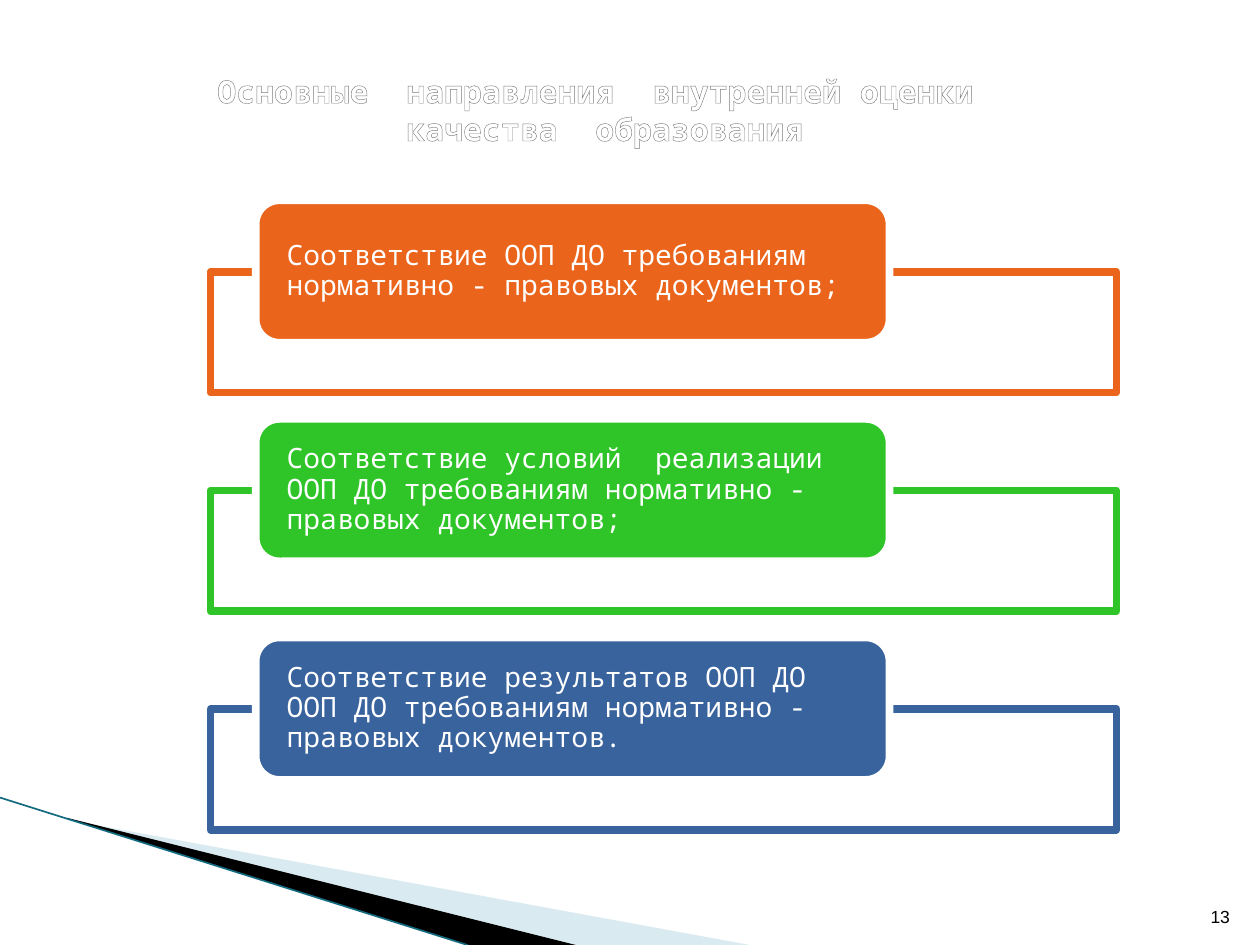
"""Build a slide listing the directions of internal education quality assessment."""
import dataclasses

import lxml.etree
import pptx
import pptx.dml.color
import pptx.enum.shapes
import pptx.enum.text
import pptx.oxml
import pptx.oxml.ns
import pptx.util

RGBColor = pptx.dml.color.RGBColor
ShapeType = pptx.enum.shapes.MSO_SHAPE
Anchor = pptx.enum.text.MSO_ANCHOR
Align = pptx.enum.text.PP_ALIGN

WHITE = RGBColor(0xFF, 0xFF, 0xFF)
BLACK = RGBColor(0x00, 0x00, 0x00)
ORANGE = RGBColor(0xEB, 0x64, 0x1B)
GREEN = RGBColor(0x2F, 0xC5, 0x29)
BLUE = RGBColor(0x39, 0x63, 0x9D)
PALE_BLUE = RGBColor(0xA0, 0xCB, 0xDC)
TEAL = RGBColor(0x13, 0x6B, 0x80)
OUTLINE_GREY = RGBColor(0x7D, 0x7D, 0x7D)
TITLE_GREY = RGBColor(0x7F, 0x7F, 0x7F)

COLUMNS, ROWS = 100, 75
CELL = pptx.util.Inches(0.1)
FIRST_ROW, ROW_STEP = 15.9, 17.35
BORDER = pptx.util.Pt(4.33)
FONT = "Noto Sans Mono"
TITLE = "Основные  направления  внутренней оценки  качества  образования"


@dataclasses.dataclass(frozen=True)
class Box:
    """A rectangle in grid columns and rows."""

    column: float
    row: float
    width: float
    height: float

    def lengths(self) -> list[int]:
        """Return left, top, width and height in slide units."""
        return [grid(value) for value in dataclasses.astuple(self)]


@dataclasses.dataclass(frozen=True)
class Direction:
    """One assessment direction and its colour."""

    text: str
    color: RGBColor


@dataclasses.dataclass(frozen=True)
class Wedge:
    """A filled corner wedge given by its grid points."""

    points: tuple[tuple[float, float], ...]
    color: RGBColor
    opacity: int


DIRECTIONS = (
    Direction("Соответствие ООП ДО требованиям нормативно - правовых документов;", ORANGE),
    Direction("Соответствие условий  реализации  ООП ДО требованиям нормативно - правовых документов;", GREEN),
    Direction("Соответствие результатов ООП ДО ООП ДО требованиям нормативно - правовых документов.", BLUE),
)
WEDGES = (
    Wedge(((5.5, 65.1), (59.5, ROWS), (45.6, ROWS), (5.5, 65)), PALE_BLUE, 40),
    Wedge(((5.3, 64.9), (45.7, ROWS), (37.2, ROWS), (5.4, 65)), BLACK, 100),
)


def grid(value: float) -> int:
    """Convert grid cells to slide units."""
    return round(value * CELL)


def set_opacity(shape, percent: int) -> None:
    """Make the solid fill of a shape partly transparent."""
    color = shape.fill._xPr.find(".//" + pptx.oxml.ns.qn("a:srgbClr"))
    lxml.etree.SubElement(color, pptx.oxml.ns.qn("a:alpha"), val=str(percent * 1000))


def add_wedge(slide, wedge: Wedge) -> None:
    """Draw one corner wedge."""
    points = [(grid(column), grid(row)) for column, row in wedge.points]
    builder = slide.shapes.build_freeform(*points[0])
    builder.add_line_segments(points[1:], close=True)
    shape = builder.convert_to_shape()
    shape.shadow.inherit = False
    shape.fill.solid()
    shape.fill.fore_color.rgb = wedge.color
    set_opacity(shape, wedge.opacity)
    shape.line.fill.background()


def add_edge(slide) -> None:
    """Draw the thin line along the corner wedges."""
    edge = slide.shapes.add_connector(
        pptx.enum.shapes.MSO_CONNECTOR.STRAIGHT, 0, grid(63.3), grid(37.1), grid(ROWS)
    )
    edge.line.color.rgb = TEAL
    edge.line.width = pptx.util.Pt(0.95)
    lxml.etree.SubElement(edge._element.spPr, pptx.oxml.ns.qn("a:effectLst"))


def add_block(slide, kind, box: Box, fill: RGBColor, border: RGBColor):
    """Draw one filled and bordered block."""
    shape = slide.shapes.add_shape(kind, *box.lengths())
    shape.shadow.inherit = False
    shape.fill.solid()
    shape.fill.fore_color.rgb = fill
    shape.line.color.rgb = border
    shape.line.width = BORDER
    return shape


def add_direction(slide, direction: Direction, row: float) -> None:
    """Draw a frame with a labelled rounded block over its top edge."""
    frame = add_block(slide, ShapeType.RECTANGLE, Box(16.7, row + 5.67, 71.9, 9.6), WHITE, direction.color)
    set_opacity(frame, 90)
    label = add_block(slide, ShapeType.ROUNDED_RECTANGLE, Box(20.3, row, 50.3, 11.3), direction.color, WHITE)
    text_frame = label.text_frame
    text_frame.word_wrap = True
    text_frame.vertical_anchor = Anchor.MIDDLE
    text_frame.margin_left = text_frame.margin_right = grid(1.9)
    text_frame.margin_top = text_frame.margin_bottom = 0
    paragraph = text_frame.paragraphs[0]
    paragraph.text = direction.text
    paragraph.alignment = Align.LEFT
    paragraph.line_spacing = 0.9
    style_font(paragraph.font, FONT, 16, WHITE)


def style_font(font, name: str, size: float, color: RGBColor) -> None:
    """Set the typeface, size and colour of a font."""
    font.name = name
    font.size = pptx.util.Pt(size)
    font.color.rgb = color


def add_text(slide, box: Box, text: str, alignment, anchor):
    """Add a wrapped text box and return its paragraph."""
    text_frame = slide.shapes.add_textbox(*box.lengths()).text_frame
    text_frame.word_wrap = True
    text_frame.vertical_anchor = anchor
    paragraph = text_frame.paragraphs[0]
    paragraph.text = text
    paragraph.alignment = alignment
    return paragraph


def add_title(slide) -> None:
    """Add the outlined title with a gradient fill."""
    paragraph = add_text(slide, Box(16.1, 5.2, 63.8, 10.2), TITLE, Align.CENTER, Anchor.TOP)
    font = paragraph.runs[0].font
    style_font(font, FONT, 18, WHITE)
    font.bold = True
    stops = "".join(
        f'<a:gs pos="{position * 1000}"><a:srgbClr val="{color}"/></a:gs>'
        for position, color in ((0, WHITE), (9, WHITE), (50, TITLE_GREY), (79, WHITE), (100, WHITE))
    )
    namespace = pptx.oxml.ns.nsdecls("a")
    properties = font._element
    properties.replace(properties.find(pptx.oxml.ns.qn("a:solidFill")), pptx.oxml.parse_xml(
        f'<a:gradFill {namespace}><a:gsLst>{stops}</a:gsLst><a:lin ang="5400000"/></a:gradFill>'
    ))
    properties.insert(0, pptx.oxml.parse_xml(
        f'<a:ln {namespace} w="{pptx.util.Pt(0.83)}"><a:solidFill>'
        f'<a:srgbClr val="{OUTLINE_GREY}"/></a:solidFill></a:ln>'
    ))


def main() -> None:
    """Build and save the presentation."""
    presentation = pptx.Presentation()
    presentation.slide_width, presentation.slide_height = grid(COLUMNS), grid(ROWS)
    slide = presentation.slides.add_slide(presentation.slide_layouts[6])
    for wedge in WEDGES:
        add_wedge(slide, wedge)
    add_edge(slide)
    for index, direction in enumerate(DIRECTIONS):
        add_direction(slide, direction, FIRST_ROW + index * ROW_STEP)
    add_title(slide)
    number = add_text(slide, Box(94.6, 70.1, 4, 4), "13", Align.RIGHT, Anchor.BOTTOM)
    style_font(number.font, "Arial", 10, BLACK)
    presentation.save("out.pptx")


if __name__ == "__main__":
    main()
